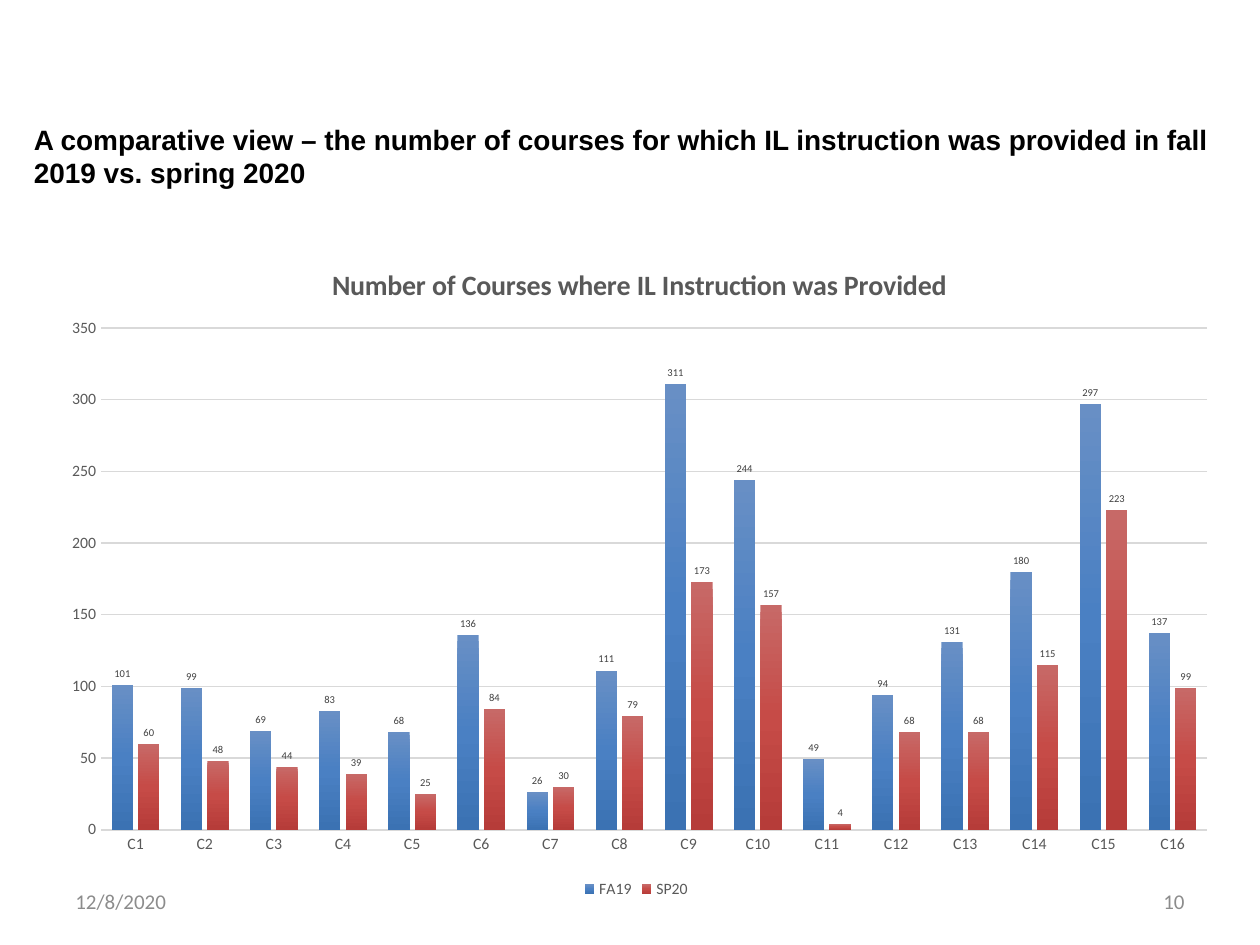
from copy import deepcopy
from dataclasses import dataclass

from lxml import etree
from pptx import Presentation
from pptx.chart.data import CategoryChartData
from pptx.dml.color import RGBColor
from pptx.enum import chart as c, text
from pptx.oxml.ns import qn
from pptx.util import Inches, Pt

COLORS = {
    "black": "000000",
    "footer": "8C8C8C",
    "chart_text": "595959",
    "label": "404040",
    "grid": "D9D9D9",
}


@dataclass
class TextItem:
    words: str
    box: tuple[float, float, float, float]
    size: int
    font: str
    color: str
    bold: bool = False
    align: text.PP_ALIGN = text.PP_ALIGN.LEFT
    anchor: text.MSO_ANCHOR = text.MSO_ANCHOR.MIDDLE


@dataclass
class Term:
    name: str
    courses: list[int]
    gradient: tuple[str, str, str]


TEXTS = [
    TextItem("12/8/2020", (0.5, 6.95, 2.33, 0.4), 12, "Calibri", "footer"),
    TextItem("10", (7.17, 6.95, 2.33, 0.4), 12, "Calibri", "footer",
             align=text.PP_ALIGN.RIGHT),
    TextItem("A comparative view – the number of courses for which IL instruction "
             "was provided in fall 2019 vs. spring 2020",
             (0.17, 0.92, 9.61, 0.64), 16, "Arial", "black", bold=True,
             anchor=text.MSO_ANCHOR.TOP),
]
TERMS = [
    Term("FA19", [101, 99, 69, 83, 68, 136, 26, 111, 311, 244, 49, 94, 131, 180, 297, 137],
         ("688FC5", "4A80C3", "3B72B3")),
    Term("SP20", [60, 48, 44, 39, 25, 84, 30, 79, 173, 157, 4, 68, 68, 115, 223, 99],
         ("C76967", "C64B47", "B63C39")),
]


def rgb(name: str) -> RGBColor:
    return RGBColor.from_string(COLORS[name])


def style_font(font, size: int, color: str, name: str = "Calibri", bold: bool = False) -> None:
    font.size, font.name, font.bold = Pt(size), name, bold
    font.color.rgb = rgb(color)


def add_text(slide, item: TextItem) -> None:
    frame = slide.shapes.add_textbox(*map(Inches, item.box)).text_frame
    frame.word_wrap = True
    frame.vertical_anchor = item.anchor
    frame.text = item.words
    paragraph = frame.paragraphs[0]
    paragraph.alignment = item.align
    style_font(paragraph.runs[0].font, item.size, item.color, item.font, item.bold)


def set_layout(parent, index: int, **values) -> None:
    """Place a chart part by fractions of the chart; index is the layout's child position."""
    for old_layout in parent.findall(qn("c:layout")):
        parent.remove(old_layout)
    layout = etree.Element(qn("c:layout"))
    parent.insert(index, layout)
    manual = etree.SubElement(layout, qn("c:manualLayout"))
    for tag, value in values.items():
        etree.SubElement(manual, qn(f"c:{tag}")).set("val", str(value))


def fill_gradient(series, colors: tuple[str, str, str]) -> None:
    """Fill a series from top to bottom with three evenly spaced colours."""
    fill = series.format.fill
    fill.gradient()
    fill.gradient_angle = 270
    stop_list = series._element.find(".//" + qn("a:gsLst"))
    stop_list.insert(1, deepcopy(stop_list[0]))
    for index, (stop, color) in enumerate(zip(fill.gradient_stops, colors)):
        stop.position = index / 2
        stop.color.rgb = RGBColor.from_string(color)


def style_axis(axis) -> None:
    axis.major_tick_mark = axis.minor_tick_mark = c.XL_TICK_MARK.NONE
    style_font(axis.tick_labels.font, 9, "chart_text")


def add_course_chart(slide, terms: list[Term]) -> None:
    data = CategoryChartData()
    data.categories = [f"C{number}" for number in range(1, len(terms[0].courses) + 1)]
    for term in terms:
        data.add_series(term.name, term.courses)
    chart = slide.shapes.add_chart(
        c.XL_CHART_TYPE.COLUMN_CLUSTERED, Inches(0.33), Inches(1.86),
        Inches(9.44), Inches(5.31), data).chart
    style_font(chart.font, 10, "black")

    title = chart.chart_title
    title.text_frame.text = "Number of Courses where IL Instruction was Provided"
    style_font(title.text_frame.paragraphs[0].runs[0].font, 16, "chart_text", bold=True)
    chart_element = chart._chartSpace.chart
    set_layout(chart_element.find(qn("c:title")), 1,
               xMode="edge", yMode="edge", x=0.24, y=0.04)

    chart.has_legend = True
    chart.legend.position = c.XL_LEGEND_POSITION.BOTTOM
    chart.legend.include_in_layout = False
    style_font(chart.legend.font, 9, "chart_text")

    categories, values = chart.category_axis, chart.value_axis
    style_axis(categories)
    categories.format.line.color.rgb = rgb("grid")
    categories.format.line.width = Pt(1)
    style_axis(values)
    values.minimum_scale, values.maximum_scale, values.major_unit = 0, 350, 50
    values.format.line.fill.background()
    values.major_gridlines.format.line.color.rgb = rgb("grid")
    values.major_gridlines.format.line.width = Pt(0.75)

    plot = chart.plots[0]
    plot.gap_width, plot.overlap, plot.vary_by_categories = 100, -24, False
    for series, term in zip(plot.series, terms):
        fill_gradient(series, term.gradient)
        labels = series.data_labels
        labels.show_value = True
        labels.position = c.XL_LABEL_POSITION.OUTSIDE_END
        style_font(labels.font, 6, "label")
    set_layout(chart_element.find(qn("c:plotArea")), 0, layoutTarget="inner",
               xMode="edge", yMode="edge", x=0.05, y=0.14, w=0.93, h=0.75)


def main() -> None:
    presentation = Presentation()
    presentation.slide_width, presentation.slide_height = Inches(10), Inches(7.5)
    slide = presentation.slides.add_slide(presentation.slide_layouts[6])
    for item in TEXTS:
        add_text(slide, item)
    add_course_chart(slide, TERMS)
    presentation.save("out.pptx")


if __name__ == "__main__":
    main()
